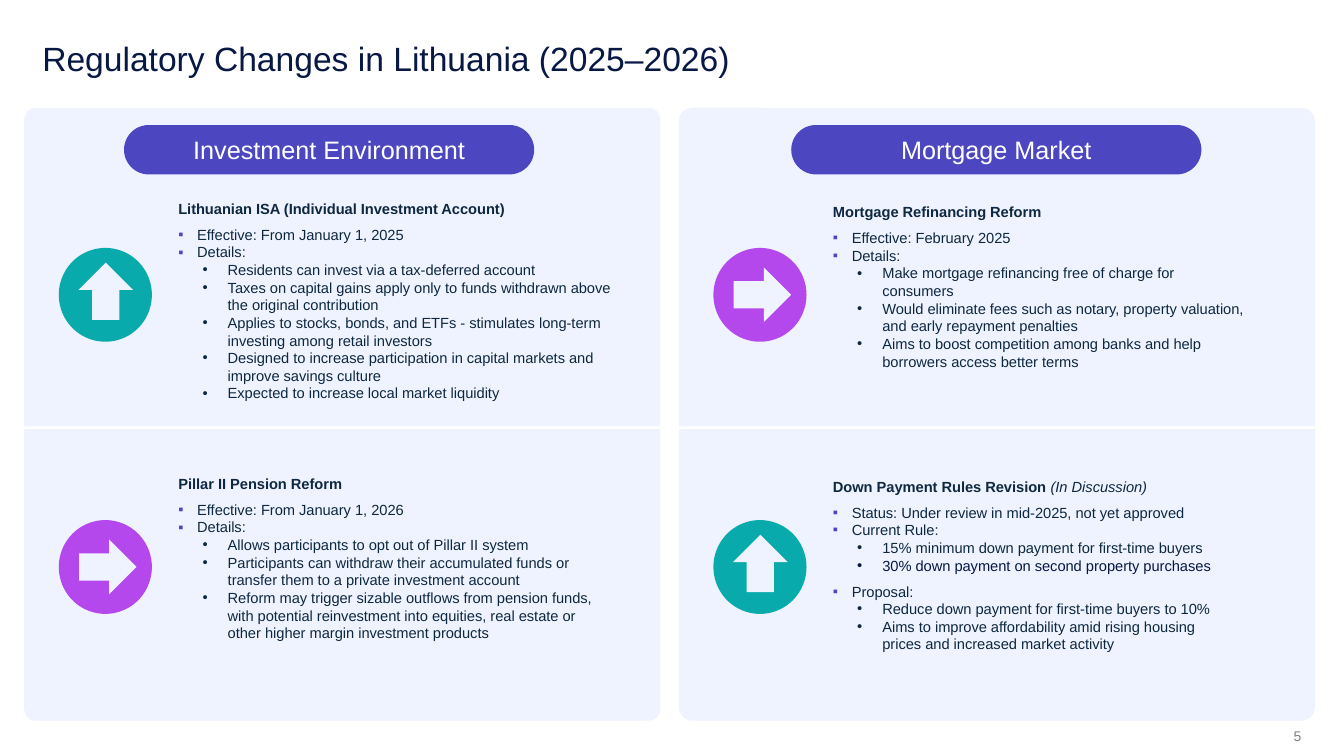
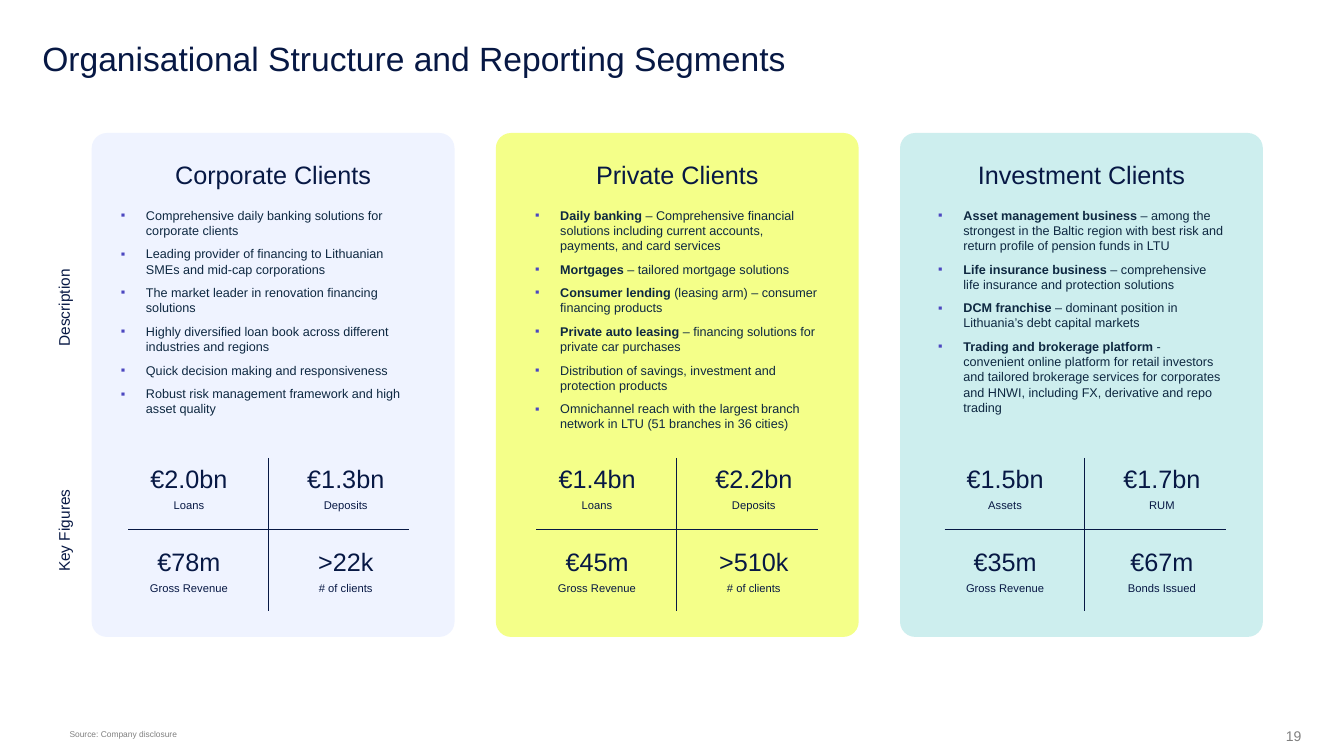
from lxml import etree
from pptx import Presentation, util as u
from pptx.dml.color import RGBColor
from pptx.enum import shapes, text
from pptx.oxml import ns

Pt = u.Pt
SHAPE = shapes.MSO_SHAPE
ALIGN = text.PP_ALIGN
COLOURS = {
    "navy": "071844", "body": "0E2841", "indigo": "4C47C0", "pale": "EFF3FF",
    "teal": "08AAAB", "violet": "B548EC", "lime": "F4FF89",
    "grey": "808080", "white": "FFFFFF",
}


class Deck:
    """Hold the shared style and the current slide."""

    def __init__(self):
        self.prs = Presentation()
        self.prs.slide_width, self.prs.slide_height = Pt(960), Pt(540)

    def colour(self, name):
        return RGBColor.from_string(COLOURS[name])

    def new_slide(self, title, number):
        self.slide = self.prs.slides.add_slide(self.prs.slide_layouts[6])
        heading = self.label(30.2, 30.2, 821.5, 26, title, 24, align=ALIGN.LEFT)
        heading.text_frame.paragraphs[0].line_spacing = 0.9
        page = self.label(712.8, 510.5, 216.7, 30, number, 10, "grey", ALIGN.RIGHT)
        page.text_frame.vertical_anchor = text.MSO_ANCHOR.MIDDLE

    def shape(self, kind, left, top, width, height, fill, corner=None, alpha=None):
        item = self.slide.shapes.add_shape(kind, Pt(left), Pt(top), Pt(width), Pt(height))
        item.shadow.inherit = False
        item.fill.solid()
        item.fill.fore_color.rgb = self.colour(fill)
        item.line.fill.background()
        if corner is not None:
            item.adjustments[0] = corner
        if alpha is not None:
            tint = item.fill._xPr.find(".//" + ns.qn("a:srgbClr"))
            etree.SubElement(tint, ns.qn("a:alpha"), val=str(alpha * 1000))
        return item

    def pill(self, left, top, caption):
        badge = self.shape(SHAPE.ROUNDED_RECTANGLE, left, top, 293, 35.3, "indigo", 0.5)
        badge.text_frame.vertical_anchor = text.MSO_ANCHOR.MIDDLE
        paragraph = badge.text_frame.paragraphs[0]
        paragraph.text = caption
        paragraph.alignment = ALIGN.CENTER
        self.font(paragraph, 18, "white")

    def line(self, x1, y1, x2, y2, colour, weight):
        rule = self.slide.shapes.add_connector(
            shapes.MSO_CONNECTOR.STRAIGHT, Pt(x1), Pt(y1), Pt(x2), Pt(y2))
        rule.line.color.rgb = self.colour(colour)
        rule.line.width = Pt(weight)
        etree.SubElement(rule._element.spPr, ns.qn("a:effectLst"))

    def font(self, paragraph, size, colour):
        paragraph.font.name = "Arial"
        paragraph.font.size = Pt(size)
        paragraph.font.color.rgb = self.colour(colour)

    def box(self, left, top, width, height, inset=True):
        area = self.slide.shapes.add_textbox(Pt(left), Pt(top), Pt(width), Pt(height))
        frame = area.text_frame
        frame.word_wrap = True
        if not inset:
            frame.margin_left = frame.margin_right = Pt(0)
            frame.margin_top = frame.margin_bottom = Pt(0)
        return area

    def label(self, left, top, width, height, words, size, colour="navy", align=ALIGN.CENTER):
        area = self.box(left, top, width, height, inset=False)
        paragraph = area.text_frame.paragraphs[0]
        paragraph.text = words
        paragraph.alignment = align
        self.font(paragraph, size, colour)
        return area

    def bullet(self, paragraph, sign, indent, hanging, colour):
        props = paragraph._p.get_or_add_pPr()
        props.set("marL", str(Pt(indent)))
        props.set("indent", str(-Pt(hanging)))
        paint = etree.SubElement(props, ns.qn("a:buClr"))
        etree.SubElement(paint, ns.qn("a:srgbClr"), val=COLOURS[colour])
        etree.SubElement(props, ns.qn("a:buFont"), typeface="Arial")
        etree.SubElement(props, ns.qn("a:buChar"), char=sign)

    def topic(self, left, top, width, height, heading, note, points):
        frame = self.box(left, top, width, height).text_frame
        lead = frame.paragraphs[0]
        lead.space_after = Pt(6)
        self.font(lead, 10.5, "body")
        run = lead.add_run()
        run.text, run.font.bold = heading, True
        if note:
            run = lead.add_run()
            run.text, run.font.italic = note, True
        for level, words, *extra in points:
            paragraph = frame.add_paragraph()
            paragraph.text = words
            paragraph.level = level
            style = extra[0] if extra else {}
            colour = style.get("colour", "body")
            if level:
                self.bullet(paragraph, "•", 35.3, 18, colour)
            else:
                self.bullet(paragraph, "▪", 13.5, 13.5, "indigo")
            if "before" in style:
                paragraph.space_before = Pt(style["before"])
            self.font(paragraph, 10.5, colour)

    def services(self, left, top, width, height, points):
        frame = self.box(left, top, width, height).text_frame
        for index, (lead, rest) in enumerate(points):
            paragraph = frame.add_paragraph() if index else frame.paragraphs[0]
            if index:
                paragraph.space_before = Pt(6)
            self.bullet(paragraph, "▪", 18, 18, "indigo")
            self.font(paragraph, 9, "body")
            if lead:
                run = paragraph.add_run()
                run.text, run.font.bold = lead, True
            paragraph.add_run().text = rest

    def direction(self, left, top, rising):
        self.shape(SHAPE.OVAL, left, top, 66.5, 67, "teal" if rising else "violet")
        dx, dy = (14, 10.5) if rising else (15.5, 13)
        arrow = self.shape(SHAPE.UP_ARROW, left + dx, top + dy, 39, 41, "pale")
        arrow.rotation = 0 if rising else 90

    def figure(self, left, top, value, caption):
        frame = self.label(left, top, 101.5, 22.3, value, 18).text_frame
        paragraph = frame.add_paragraph()
        paragraph.text = caption
        paragraph.alignment = ALIGN.CENTER
        paragraph.space_before = Pt(3)
        self.font(paragraph, 8, "navy")


REFORMS = [
    ("Investment Environment", 17.3, 88.6, 0.019, [
        (139, 330, 148, True, "Lithuanian ISA (Individual Investment Account)", "", [
            (0, "Effective: From January 1, 2025"),
            (0, "Details:"),
            (1, "Residents can invest via a tax-deferred account"),
            (1, "Taxes on capital gains apply only to funds withdrawn above the original contribution"),
            (1, "Applies to stocks, bonds, and ETFs - stimulates long-term investing among retail investors"),
            (1, "Designed to increase participation in capital markets and improve savings culture"),
            (1, "Expected to increase local market liquidity"),
        ]),
        (335.5, 317.5, 161, False, "Pillar II Pension Reform", "", [
            (0, "Effective: From January 1, 2026"),
            (0, "Details:"),
            (1, "Allows participants to opt out of Pillar II system"),
            (1, "Participants can withdraw their accumulated funds or transfer them to a private investment account"),
            (1, "Reform may trigger sizable outflows from pension funds, with potential reinvestment into "
                "equities, real estate or other higher margin investment products"),
        ]),
    ]),
    ("Mortgage Market", 484.9, 565.2, 0.022, [
        (141.5, 312, 117, False, "Mortgage Refinancing Reform", "", [
            (0, "Effective: February 2025"),
            (0, "Details:"),
            (1, "Make mortgage refinancing free of charge for consumers"),
            (1, "Would eliminate fees such as notary, property valuation, and early repayment penalties"),
            (1, "Aims to boost competition among banks and help borrowers access better terms"),
        ]),
        (337.5, 294, 151, True, "Down Payment Rules Revision ", "(In Discussion)", [
            (0, "Status: Under review in mid-2025, not yet approved"),
            (0, "Current Rule:"),
            (1, "15% minimum down payment for first-time buyers"),
            (1, "30% down payment on second property purchases", {"colour": "navy"}),
            (0, "Proposal:", {"before": 6}),
            (1, "Reduce down payment for first-time buyers to 10%"),
            (1, "Aims to improve affordability amid rising housing prices and increased market activity"),
        ]),
    ]),
]

SEGMENTS = [
    ("Corporate Clients", "pale", None, 79.2, [
        ("", "Comprehensive daily banking solutions for corporate clients"),
        ("", "Leading provider of financing to Lithuanian SMEs and mid-cap corporations"),
        ("", "The market leader in renovation financing solutions"),
        ("", "Highly diversified loan book across different industries and regions"),
        ("", "Quick decision making and responsiveness"),
        ("", "Robust risk management framework and high asset quality"),
    ], [("€2.0bn", "Loans"), ("€1.3bn", "Deposits"),
        ("€78m", "Gross Revenue"), (">22k", "# of clients")]),
    ("Private Clients", "lime", None, 375.1, [
        ("Daily banking ", "– Comprehensive financial solutions including current accounts, "
                           "payments, and card services"),
        ("Mortgages", " – tailored mortgage solutions"),
        ("Consumer lending ", "(leasing arm) – consumer financing products"),
        ("Private auto leasing ", "– financing solutions for private car purchases"),
        ("", "Distribution of savings, investment and protection products"),
        ("", "Omnichannel reach with the largest branch network in LTU (51 branches in 36 cities)"),
    ], [("€1.4bn", "Loans"), ("€2.2bn", "Deposits"),
        ("€45m", "Gross Revenue"), (">510k", "# of clients")]),
    ("Investment Clients", "teal", 20, 663.1, [
        ("Asset management business ", "– among the strongest in the Baltic region with best risk "
                                       "and return profile of pension funds in LTU"),
        ("Life insurance business ", "– comprehensive life insurance and protection solutions"),
        ("DCM franchise ", "– dominant position in Lithuania’s debt capital markets"),
        ("Trading and brokerage platform ", "- convenient online platform for retail investors and "
                                            "tailored brokerage services for corporates and HNWI, "
                                            "including FX, derivative and repo trading"),
    ], [("€1.5bn", "Assets"), ("€1.7bn", "RUM"),
        ("€35m", "Gross Revenue"), ("€67m", "Bonds Issued")]),
]


def regulatory_slide(deck):
    deck.new_slide("Regulatory Changes in Lithuania (2025–2026)", "5")
    for market, left, pill_left, corner, topics in REFORMS:
        deck.shape(SHAPE.ROUNDED_RECTANGLE, left, 77, 454.3, 437.8, "pale", corner)
        deck.pill(pill_left, 89.3, market)
        for row, (top, width, height, rising, heading, note, points) in enumerate(topics):
            deck.topic(left + 103, top, width, height, heading, note, points)
            deck.direction(left + 24.7, 177.1 + 194.4 * row, rising)
    deck.line(14.4, 305.3, 945.4, 305.3, "white", 2.25)


def segments_slide(deck):
    deck.new_slide("Organisational Structure and Reporting Segments", "19")
    for column, (name, fill, alpha, text_left, points, figures) in enumerate(SEGMENTS):
        card_left = 65.5 + 288.7 * column
        grid_left = 84.2 + 291.5 * column
        deck.shape(SHAPE.ROUNDED_RECTANGLE, card_left, 95, 259.2, 360, fill, 0.042, alpha)
        deck.label(card_left, 113.8, 259.2, 22.3, name, 18)
        deck.services(text_left, 144.7, 218.9, 190.8, points)
        for index, (value, caption) in enumerate(figures):
            row, side = divmod(index, 2)
            deck.figure(grid_left + 112 * side, 331.2 + 59.2 * row, value, caption)
        deck.line(grid_left + 107.5, 327, grid_left + 107.5, 436.3, "navy", 0.5)
        deck.line(grid_left + 7.5, 378, grid_left + 208.3, 378, "navy", 0.5)
    for band, top in (("Description", 208.8), ("Key Figures", 367.9)):
        deck.label(-5, top, 110.2, 22.3, band, 11).rotation = 270
    deck.label(49.7, 520.6, 210.2, 18.7, "Source: Company disclosure", 6, "grey", ALIGN.LEFT)


def main():
    deck = Deck()
    regulatory_slide(deck)
    segments_slide(deck)
    deck.prs.save("out.pptx")


if __name__ == "__main__":
    main()
